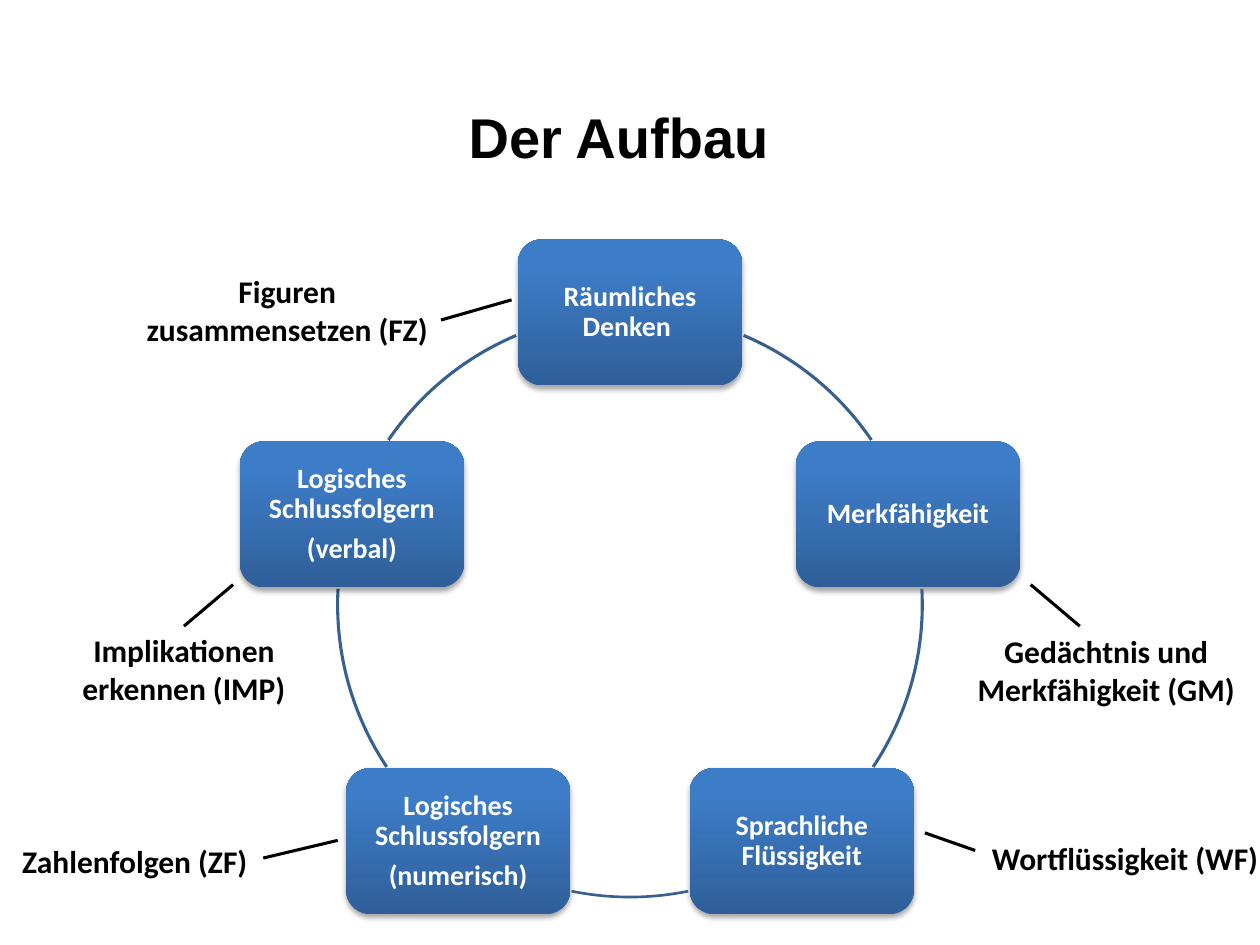
from math import cos, radians, sin

from lxml import etree
from pptx import Presentation
from pptx.dml.color import RGBColor
from pptx.enum.shapes import MSO_CONNECTOR, MSO_SHAPE
from pptx.enum.text import MSO_ANCHOR, MSO_AUTO_SIZE, PP_ALIGN
from pptx.oxml import parse_xml
from pptx.oxml.ns import qn
from pptx.util import Inches, Pt

ROUNDED = MSO_SHAPE.ROUNDED_RECTANGLE
ARC = MSO_SHAPE.ARC
STRAIGHT = MSO_CONNECTOR.STRAIGHT
CENTER = PP_ALIGN.CENTER
MIDDLE, TOP = MSO_ANCHOR.MIDDLE, MSO_ANCHOR.TOP
NO_AUTOFIT = MSO_AUTO_SIZE.NONE

WIDTH, HEIGHT = 10, 7.5
RING_X, RING_Y, RADIUS = WIDTH / 2, 4.8, 2.32
BOX_WIDTH, BOX_HEIGHT = 1.78, 1.16
LABEL_WIDTH = 2.44
TITLE_ONLY = 5

TITLE = "Der Aufbau"
ABILITIES = [
    ["Räumliches Denken "],
    ["Merkfähigkeit"],
    ["Sprachliche Flüssigkeit"],
    ["Logisches Schlussfolgern", "(numerisch)"],
    ["Logisches Schlussfolgern", "(verbal)"],
]
ARCS = [
    (292.9, 325.7, 1.75),
    (356.9, 33.7, 1.75),
    (78.5, 101.5, 1.5),
    (146.3, 183.1, 1.75),
    (214.3, 247.1, 1.75),
]
SUBTESTS = [
    ("Implikationen erkennen (IMP)", 0.24, 4.96, 0.71, (1.85, 4.64, 1.46, 4.97)),
    ("Figuren zusammensetzen (FZ)", 1.06, 2.11, 0.71, (4.06, 2.38, 3.5, 2.54)),
    ("Gedächtnis und Merkfähigkeit (GM)", 7.56, 4.97, 0.71, (8.18, 4.64, 8.57, 4.97)),
    ("Wortflüssigkeit (WF)", 7.71, 6.61, 0.4, (7.34, 6.61, 7.74, 6.75)),
    ("Zahlenfolgen (ZF)", -0.15, 6.63, 0.4, (2.68, 6.67, 2.09, 6.81)),
]
BOX_SHADOW = (
    '<a:effectLst xmlns:a="http://schemas.openxmlformats.org/drawingml/2006/main">'
    '<a:outerShdw blurRad="39370" dist="22860" dir="5400000" rotWithShape="0">'
    '<a:srgbClr val="000000"><a:alpha val="35000"/></a:srgbClr>'
    "</a:outerShdw></a:effectLst>"
)


def color(value):
    return RGBColor.from_string(value)


def inches(*values):
    return [Inches(value) for value in values]


def write(shape, paragraphs, size, font="Calibri", fill="000000", anchor=TOP,
          insets=(0.1, 0.05), line_spacing=1.0, space_after=0):
    frame = shape.text_frame
    frame.word_wrap = True
    frame.auto_size = NO_AUTOFIT
    frame.vertical_anchor = anchor
    frame.margin_left = frame.margin_right = Inches(insets[0])
    frame.margin_top = frame.margin_bottom = Inches(insets[1])
    for index, text in enumerate(paragraphs):
        paragraph = frame.add_paragraph() if index else frame.paragraphs[0]
        paragraph.alignment = CENTER
        paragraph.line_spacing = line_spacing
        paragraph.space_before = Pt(0)
        paragraph.space_after = Pt(space_after)
        run = paragraph.add_run()
        run.text = text
        run.font.name = font
        run.font.size = Pt(size)
        run.font.bold = True
        run.font.color.rgb = color(fill)


def add_ability(slide, paragraphs, angle):
    left = RING_X + RADIUS * cos(radians(angle)) - BOX_WIDTH / 2
    top = RING_Y + RADIUS * sin(radians(angle)) - BOX_HEIGHT / 2
    box = slide.shapes.add_shape(ROUNDED, *inches(left, top, BOX_WIDTH, BOX_HEIGHT))
    box.fill.gradient()
    box.fill.gradient_angle = 90
    for stop, position, value in zip(box.fill.gradient_stops, (0, 0.8), ("2F5F99", "3D7CC7")):
        stop.position = position
        stop.color.rgb = color(value)
    box.line.fill.background()
    box._element.spPr.append(parse_xml(BOX_SHADOW))
    write(box, paragraphs, 16, fill="FFFFFF", anchor=MIDDLE, insets=(0.07, 0.07),
          line_spacing=0.9, space_after=5.6)


def add_arc(slide, start, end, width):
    arc = slide.shapes.add_shape(
        ARC, *inches(RING_X - RADIUS, RING_Y - RADIUS, 2 * RADIUS, 2 * RADIUS))
    arc.adjustments[0] = start * 0.6
    arc.adjustments[1] = end * 0.6
    arc.fill.background()
    arc.line.color.rgb = color("376092")
    arc.line.width = Pt(width)
    arc.shadow.inherit = False


def add_subtest(slide, text, left, top, height, ends):
    pointer = slide.shapes.add_connector(STRAIGHT, *inches(*ends))
    pointer.line.color.rgb = color("000000")
    pointer.line.width = Pt(1.75)
    etree.SubElement(pointer._element.spPr, qn("a:effectLst"))
    label = slide.shapes.add_textbox(*inches(left, top, LABEL_WIDTH, height))
    write(label, [text], 18)


def main():
    presentation = Presentation()
    presentation.slide_width, presentation.slide_height = inches(WIDTH, HEIGHT)
    slide = presentation.slides.add_slide(presentation.slide_layouts[TITLE_ONLY])
    title = slide.shapes.title
    title.left, title.top, title.width, title.height = inches(2.27, 0.76, 5.28, 0.64)
    write(title, [TITLE], 32, font="Arial")
    for index, (paragraphs, arc) in enumerate(zip(ABILITIES, ARCS)):
        add_ability(slide, paragraphs, 360 / len(ABILITIES) * index - 90)
        add_arc(slide, *arc)
    for subtest in SUBTESTS:
        add_subtest(slide, *subtest)
    presentation.save("out.pptx")


if __name__ == "__main__":
    main()
